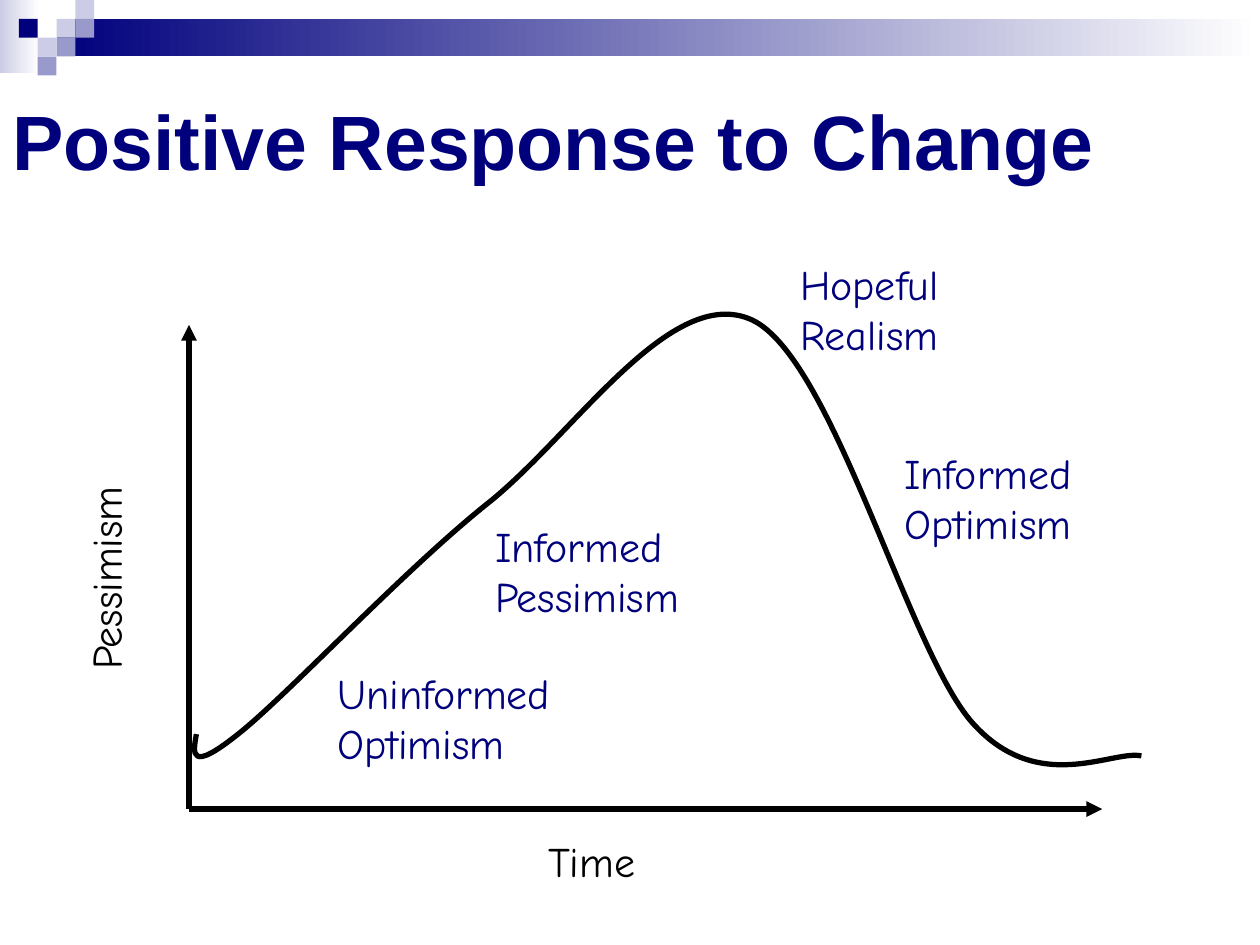
from dataclasses import dataclass

from lxml import etree
from pptx import Presentation
from pptx import util as u
from pptx.dml.color import RGBColor
from pptx.enum import shapes, text
from pptx.oxml import ns


@dataclass(frozen=True)
class Theme:
    """Colours, fonts and sizes of the slide."""
    navy: str = "00007D"
    mid: str = "9999CC"
    pale: str = "CCCCE6"
    white: str = "FFFFFF"
    black: str = "000000"
    head: str = "Arial"
    body: str = "Comic Neue"
    big: int = 44
    small: int = 24
    line: int = 3


THEME = Theme()


def add_text(slide, box, words, font, size, color, bold=False):
    """Add a wrapping text box and return it."""
    label = slide.shapes.add_textbox(*map(u.Cm, box))
    frame = label.text_frame
    frame.word_wrap = True
    frame.text = words
    style = frame.paragraphs[0].font
    style.name, style.size, style.bold = font, u.Pt(size), bold
    style.color.rgb = RGBColor.from_string(color)
    return label


def add_block(slide, box, color, fade=None):
    """Add a plain rectangle, solid or fading to a second colour."""
    block = slide.shapes.add_shape(shapes.MSO_SHAPE.RECTANGLE, *map(u.Cm, box))
    block.shadow.inherit = False
    block.line.fill.background()
    if fade is None:
        block.fill.solid()
        block.fill.fore_color.rgb = RGBColor.from_string(color)
        return
    block.fill.gradient()
    block.fill.gradient_angle = 0
    for stop, shade, place in zip(block.fill.gradient_stops, (color, fade), (0, 1)):
        stop.color.rgb = RGBColor.from_string(shade)
        stop.position = place


def set_line(line):
    """Give a line the theme's black stroke."""
    line.color.rgb = RGBColor.from_string(THEME.black)
    line.width = u.Pt(THEME.line)


def add_banner(slide, box):
    """Draw the fading band and its checker of small squares."""
    left, top, width, height = box
    side = 0.38
    add_block(slide, (left, top, 0.79, height), THEME.pale, THEME.white)
    add_block(slide, (left + 3 * side, top + side, width - 3 * side, 2 * side),
              THEME.navy, THEME.white)
    tiles = [(3, 1, THEME.pale), (4, 0, THEME.pale), (4, 1, THEME.mid),
             (2, 2, THEME.pale), (1, 1, THEME.navy), (3, 2, THEME.mid),
             (2, 3, THEME.mid)]
    for col, row, color in tiles:
        add_block(slide, (left + col * side, top + row * side, side, side), color)


def add_title(slide, box):
    """Add the heading, centred by height in its box."""
    title = add_text(slide, box, "Positive Response to Change",
                     THEME.head, THEME.big, THEME.navy, True)
    title.text_frame.vertical_anchor = text.MSO_ANCHOR.MIDDLE


def add_axis(slide, start, end):
    """Draw an axis with an arrowhead at its end."""
    axis = slide.shapes.add_connector(shapes.MSO_CONNECTOR.STRAIGHT,
                                      *map(u.Cm, start + end))
    set_line(axis.line)
    etree.SubElement(axis.get_or_add_ln(), ns.qn("a:tailEnd"), type="triangle")
    etree.SubElement(axis._element.spPr, ns.qn("a:effectLst"))


def add_curve(slide, points):
    """Draw a smooth curve from a start and triples of Bezier points."""
    spots = [(u.Cm(x), u.Cm(y)) for x, y in points]
    pen = slide.shapes.build_freeform(*spots[0])
    pen.add_line_segments(spots[1:], close=False)
    curve = pen.convert_to_shape()
    curve.shadow.inherit = False
    curve.fill.background()
    set_line(curve.line)
    legs = list(curve._element.iter(ns.qn("a:lnTo")))
    for i in range(0, len(legs), 3):
        bend = etree.Element(ns.qn("a:cubicBezTo"))
        legs[i].addprevious(bend)
        for leg in legs[i:i + 3]:
            bend.append(leg[0])
            leg.getparent().remove(leg)


def add_graph(slide, box):
    """Draw the axes, the curve and their labels around the box."""
    left, top, width, height = box
    base = top + height
    add_axis(slide, (left, base), (left, top))
    add_axis(slide, (left, base), (left + width, base))
    names = [("Pessimism", -5.08, 3.18, 6.78, 270), ("Time", 6.99, 10.16, 3.38, 0)]
    for words, x, y, wide, turn in names:
        label = add_text(slide, (left + x, top + y, wide, 1.27), words,
                         THEME.body, THEME.small, THEME.black)
        label.rotation = turn
    points = [(0.15, 8.25),
              (0.08, 8.64), (0, 9.04), (0.99, 8.25),
              (1.98, 7.47), (4.34, 4.93), (6.07, 3.56),
              (7.8, 2.16), (9.73, -0.84), (11.35, -0.1),
              (12.98, 0.66), (14.5, 6.58), (15.8, 8.03),
              (17.12, 9.5), (18.62, 8.56), (19.2, 8.69)]
    add_curve(slide, [(left + x, top + y) for x, y in points])
    stages = [("Uninformed Optimism", 2.74, 6.78),
              ("Informed Pessimism", 5.92, 3.81),
              ("Informed Optimism", 14.17, 2.34),
              ("Hopeful Realism", 12.07, -1.47)]
    for words, x, y in stages:
        add_text(slide, (left + x, top + y, 5.72, 2.29), words,
                 THEME.body, THEME.small, THEME.navy)


def main():
    """Build and save the slide."""
    deck = Presentation()
    deck.slide_width, deck.slide_height = u.Cm(25.4), u.Cm(19.05)
    slide = deck.slides.add_slide(deck.slide_layouts[6])
    add_banner(slide, (0, 0, 25.4, 1.47))
    add_title(slide, (0, 0.91, 22.86, 3.81))
    add_graph(slide, (3.81, 6.55, 18.41, 9.76))
    deck.save("out.pptx")


if __name__ == "__main__":
    main()
